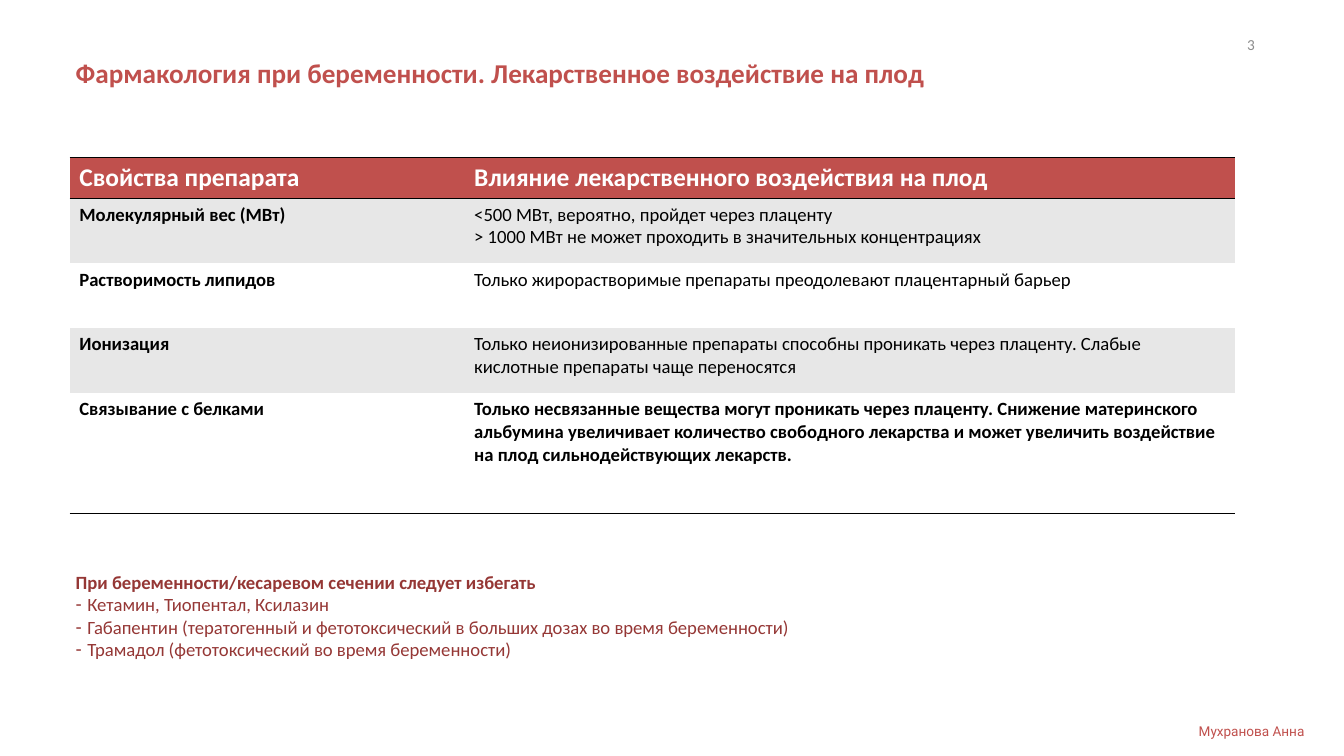
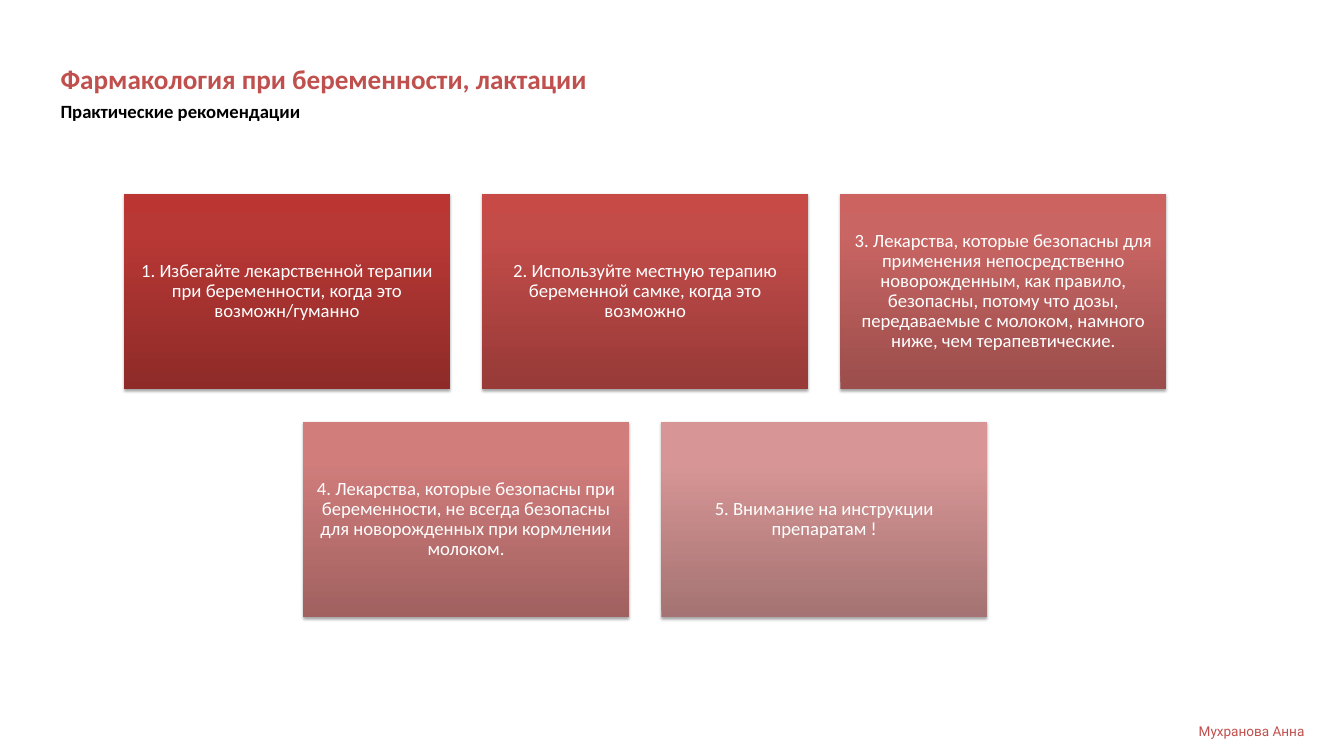
import dataclasses

import lxml.etree
import pptx
import pptx.dml.color
import pptx.enum.shapes
import pptx.enum.text
import pptx.oxml
import pptx.oxml.ns
import pptx.util

ALIGN = pptx.enum.text.PP_ALIGN
ANCHOR = pptx.enum.text.MSO_ANCHOR
qn = pptx.oxml.ns.qn
DRAWING = pptx.oxml.ns.nsdecls("a")
NO_TABLE_STYLE = "{2D5ABB26-0587-4C30-8999-92F81FD0307C}"


@dataclasses.dataclass(frozen=True)
class Theme:
    font: str = "Calibri"
    footer_font: str = "Roboto"
    accent: str = "C0504D"
    warning: str = "953735"
    ink: str = "000000"
    paper: str = "FFFFFF"
    band: str = "E7E7E7"
    muted: str = "8C8C8C"
    title_size: int = 32
    header_size: int = 30
    body_size: int = 22
    number_size: int = 18
    footer_size: int = 16
    # Dark foot, main tone and light top of each card
    card_tones: tuple = (
        ("8E2B28", "B83835", "BB3632"),
        ("973A38", "C34C49", "C74A47"),
        ("9B4E4C", "C96563", "CC6361"),
        ("A0615F", "D07D7C", "D27C7B"),
        ("A57373", "D79695", "D99594"),
    )


THEME = Theme()


def rgb(value):
    return pptx.dml.color.RGBColor.from_string(value)


def write(frame, text, *, size=THEME.body_size, color=THEME.ink, bold=False,
          font=THEME.font, align=ALIGN.LEFT, spacing=1.0, bullet=None):
    """Add one formatted paragraph, filling the first one if it is empty."""
    paragraph = frame.paragraphs[0]
    if paragraph.runs:
        paragraph = frame.add_paragraph()
    paragraph.alignment = align
    paragraph.line_spacing = spacing
    paragraph.space_before = paragraph.space_after = pptx.util.Pt(0)
    hang = pptx.util.Inches(0.19 if bullet else 0)
    properties = paragraph._p.get_or_add_pPr()
    properties.set("marL", str(hang))
    properties.set("indent", str(-hang))
    mark = lxml.etree.SubElement(properties, qn("a:buChar" if bullet else "a:buNone"))
    if bullet:
        mark.set("char", bullet)
    run = paragraph.add_run()
    run.text = text
    run.font.name = font
    run.font.size = pptx.util.Pt(size)
    run.font.bold = bold
    run.font.color.rgb = rgb(color)


def set_margins(target, across, down):
    target.margin_left = target.margin_right = pptx.util.Inches(across)
    target.margin_top = target.margin_bottom = pptx.util.Inches(down)


def rule_cell(cell, sides):
    """Draw 2 pt rules on the given sides: T for top, B for bottom."""
    properties = cell._tc.get_or_add_tcPr()
    for index, side in enumerate(sides):
        properties.insert(index, pptx.oxml.parse_xml(
            f'<a:ln{side} {DRAWING} w="25400"><a:solidFill>'
            f'<a:srgbClr val="{THEME.ink}"/></a:solidFill></a:ln{side}>'))


class Deck:
    """Holds the style and current slide; lengths are percent of the slide."""

    def __init__(self, theme):
        self.theme = theme
        self.show = pptx.Presentation()
        self.show.slide_width = pptx.util.Inches(21.99)
        self.show.slide_height = pptx.util.Inches(12.37)
        self.slide = None

    def across(self, share):
        return round(self.show.slide_width * share / 100)

    def down(self, share):
        return round(self.show.slide_height * share / 100)

    def box(self, left, top, width, height):
        return (self.across(left), self.down(top),
                self.across(width), self.down(height))

    def placeholder(self, index, area):
        holder = self.slide.placeholders[index]
        holder.left, holder.top, holder.width, holder.height = self.box(*area)
        frame = holder.text_frame
        frame.word_wrap = True
        frame.auto_size = pptx.enum.text.MSO_AUTO_SIZE.NONE
        frame.vertical_anchor = ANCHOR.TOP
        set_margins(frame, 0.1, 0.05)
        return frame

    def label(self, text, area, **style):
        frame = self.slide.shapes.add_textbox(*self.box(*area)).text_frame
        frame.word_wrap = True
        set_margins(frame, 0, 0)
        write(frame, text, align=ALIGN.RIGHT, **style)

    def start_slide(self, title, title_area):
        self.slide = self.show.slides.add_slide(self.show.slide_layouts[1])
        write(self.placeholder(0, title_area), title, bold=True,
              size=self.theme.title_size, color=self.theme.accent)
        self.label("Мухранова Анна", (45.66, 95.63, 51.4, 2.18),
                   size=self.theme.footer_size, color=self.theme.accent,
                   font=self.theme.footer_font)

    def page_number(self, number):
        self.label(str(number), (85.86, 4.69, 7.5, 2.43),
                   size=self.theme.number_size, color=self.theme.muted)

    def table(self, rows, left, top, widths, heights):
        """Each row is a list of cells; each cell is a list of paragraphs."""
        holder = self.slide.shapes.add_table(
            len(rows), len(widths),
            *self.box(left, top, sum(widths), sum(heights)))
        table = holder.table
        table.horz_banding = False
        next(holder.element.iter(qn("a:tableStyleId"))).text = NO_TABLE_STYLE
        for column, width in zip(table.columns, widths):
            column.width = self.across(width)
        last = len(rows) - 1
        for r, (row, height) in enumerate(zip(rows, heights)):
            table.rows[r].height = self.down(height)
            fill = self.theme.band if r % 2 else self.theme.paper
            style = {}
            if r == 0:
                fill = self.theme.accent
                style = dict(size=self.theme.header_size, color=self.theme.paper)
            for c, lines in enumerate(row):
                cell = table.cell(r, c)
                set_margins(cell, 0.16, 0.08)
                cell.fill.solid()
                cell.fill.fore_color.rgb = rgb(fill)
                for line in lines:
                    write(cell.text_frame, line,
                          bold=c == 0 or r in (0, last), **style)
                rule_cell(cell, {0: "TB", last: "B"}.get(r, ""))

    def card(self, text, area, tones):
        card = self.slide.shapes.add_shape(
            pptx.enum.shapes.MSO_SHAPE.RECTANGLE, *self.box(*area))
        card.line.fill.background()
        card.fill.background()
        card.shadow.inherit = False
        stops = "".join(
            f'<a:gs pos="{place * 1000}"><a:srgbClr val="{tone}"/></a:gs>'
            for place, tone in zip((0, 80, 100), tones))
        properties = card.element.spPr
        properties.replace(properties.find(qn("a:noFill")), pptx.oxml.parse_xml(
            f'<a:gradFill {DRAWING} rotWithShape="1"><a:gsLst>{stops}</a:gsLst>'
            '<a:lin ang="16200000" scaled="0"/></a:gradFill>'))
        properties.find(qn("a:effectLst")).append(pptx.oxml.parse_xml(
            f'<a:outerShdw {DRAWING} blurRad="40000" dist="23000" dir="5400000" '
            f'rotWithShape="0"><a:srgbClr val="{self.theme.ink}">'
            '<a:alpha val="35000"/></a:srgbClr></a:outerShdw>'))
        frame = card.text_frame
        frame.word_wrap = True
        frame.vertical_anchor = ANCHOR.MIDDLE
        set_margins(frame, 0.09, 0.09)
        write(frame, text, color=self.theme.paper, align=ALIGN.CENTER, spacing=0.9)

    def card_rows(self, texts, per_row):
        """Lay cards out in rows, each centred on the same axis."""
        width, height, gap_across, gap_down = 24.24, 25.87, 2.41, 4.28
        axis, top = 48, 25.63
        for i, (text, tones) in enumerate(zip(texts, self.theme.card_tones)):
            row, column = divmod(i, per_row)
            count = min(per_row, len(texts) - row * per_row)
            span = count * width + (count - 1) * gap_across
            left = axis - span / 2 + column * (width + gap_across)
            self.card(text, (left, top + row * (height + gap_down), width, height),
                      tones)


def drug_effect_slide(deck):
    margin = 5.18
    deck.start_slide("Фармакология при беременности. Лекарственное воздействие на плод",
                     (margin, 7.11, 66, 5.17))
    deck.page_number(3)
    deck.table([
        [["Свойства препарата"], ["Влияние лекарственного воздействия на плод"]],
        [["Молекулярный вес (МВт)"],
         ["<500 МВт, вероятно, пройдет через плаценту",
          "> 1000 МВт не может проходить в значительных концентрациях"]],
        [["Растворимость липидов"],
         ["Только жирорастворимые препараты преодолевают плацентарный барьер"]],
        [["Ионизация"],
         ["Только неионизированные препараты способны проникать через плаценту. "
          "Слабые кислотные препараты чаще переносятся"]],
        [["Связывание с белками"],
         ["Только несвязанные вещества могут проникать через плаценту. "
          "Снижение материнского альбумина увеличивает количество свободного "
          "лекарства и может увеличить воздействие на плод "
          "сильнодействующих лекарств."]],
    ], margin, 20.86, widths=(29.38, 57.34), heights=(5.42, 8.57, 8.57, 8.57, 15.93))

    avoid = deck.placeholder(1, (margin, 75.1, 65.89, 12.77))
    write(avoid, "При беременности/кесаревом сечении следует избегать",
          color=deck.theme.warning, bold=True)
    for drug in (
        "Кетамин, Тиопентал, Ксилазин",
        "Габапентин (тератогенный и фетотоксический в больших дозах "
        "во время беременности)",
        "Трамадол (фетотоксический во время беременности)",
    ):
        write(avoid, drug, color=deck.theme.warning, bullet="-")


def recommendations_slide(deck):
    margin = 4.05
    deck.start_slide("Фармакология при беременности, лактации",
                     (margin, 7.84, 41.93, 5.17))
    write(deck.placeholder(1, (margin, 12.85, 90.18, 4)),
          "Практические рекомендации", bold=True)
    deck.card_rows([
        "1. Избегайте лекарственной терапии при беременности, "
        "когда это возможн/гуманно",
        "2. Используйте местную терапию беременной самке, когда это возможно",
        "3. Лекарства, которые безопасны для применения непосредственно "
        "новорожденным, как правило, безопасны, потому что дозы, "
        "передаваемые с молоком, намного ниже, чем терапевтические.",
        "4. Лекарства, которые безопасны при беременности, не всегда "
        "безопасны для новорожденных при кормлении молоком.",
        "5. Внимание на инструкции препаратам !",
    ], per_row=3)


def main():
    deck = Deck(THEME)
    drug_effect_slide(deck)
    recommendations_slide(deck)
    deck.show.save("out.pptx")


if __name__ == "__main__":
    main()
